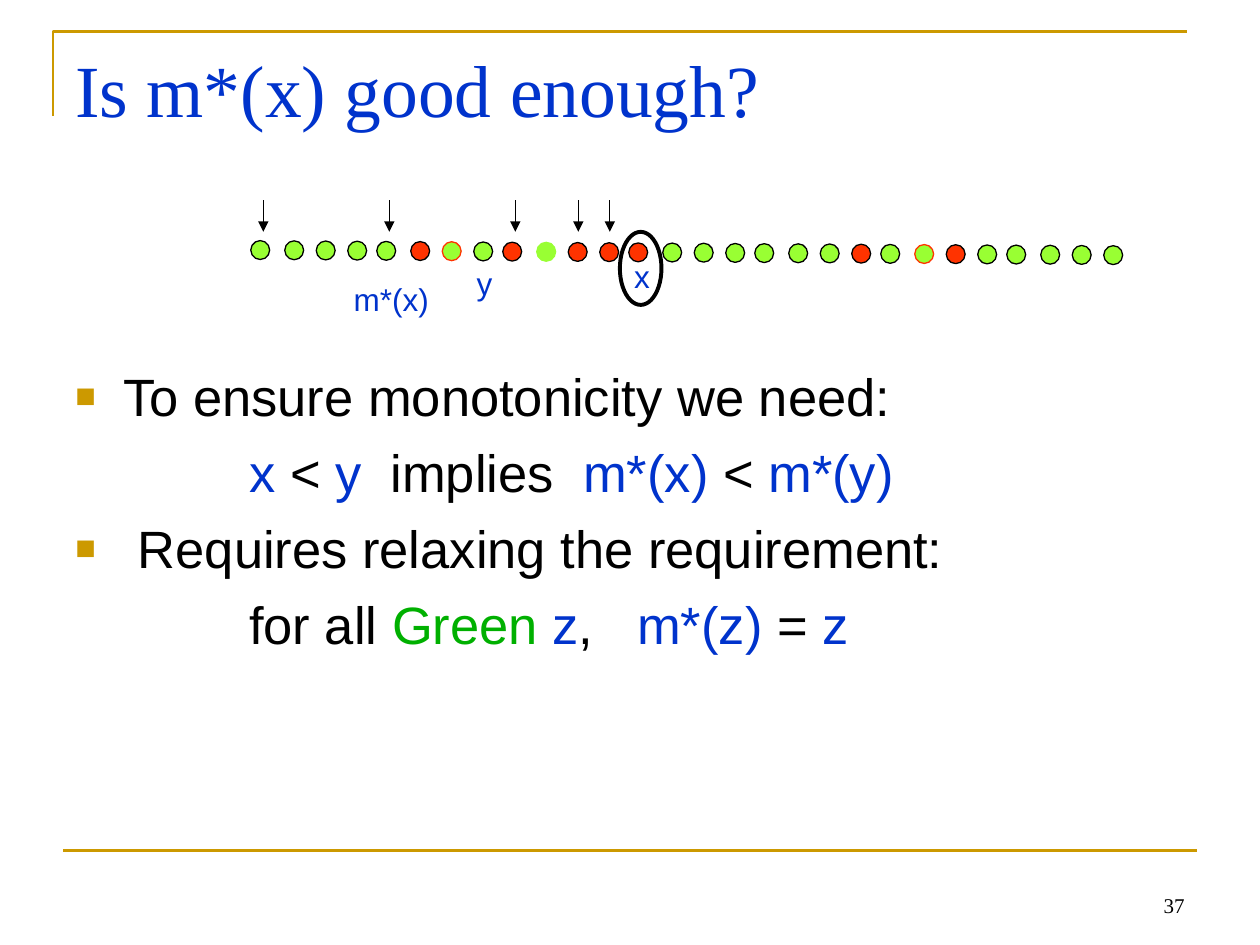
from dataclasses import dataclass

from lxml import etree
from pptx import Presentation
from pptx.dml.color import RGBColor
from pptx.enum.shapes import MSO_CONNECTOR, MSO_SHAPE
from pptx.enum.text import MSO_ANCHOR, PP_ALIGN
from pptx.oxml.ns import qn
from pptx.util import Inches, Pt

STRAIGHT = MSO_CONNECTOR.STRAIGHT
OVAL = MSO_SHAPE.OVAL
TOP, BOTTOM = MSO_ANCHOR.TOP, MSO_ANCHOR.BOTTOM
LEFT, CENTER, RIGHT = PP_ALIGN.LEFT, PP_ALIGN.CENTER, PP_ALIGN.RIGHT


@dataclass(frozen=True)
class Theme:
    gold: str = "CC9900"
    blue: str = "0033CC"
    black: str = "000000"
    word_green: str = "00B000"
    dot_green: str = "99FF33"
    dot_red: str = "FF3300"
    serif: str = "Times New Roman"
    sans: str = "Arial"
    title_size: int = 42
    body_size: int = 30
    label_size: int = 18
    number_size: int = 12
    rule: float = 1.5
    thin: float = 0.75
    thick: float = 2.25


THEME = Theme()

# Fill and outline of each kind of dot in the sequence
DOT_STYLES = {
    "G": (THEME.dot_green, THEME.black),
    "R": (THEME.dot_red, THEME.black),
    "g": (THEME.dot_green, THEME.dot_red),
    "b": (THEME.dot_green, THEME.dot_green),
}
SEQUENCE = "GGGGGRgGRbRRRGGGGGGRGgRGGGGG"
DOT_STEPS = (0, 0.27, 0.52, 0.77)  # offsets inside each group of four
ARROW_OFFSETS = (0, 1, 2, 2.5, 2.75)

# Each line: has a bullet, then its words with their colours
BODY_LINES = [
    (True, [("To ensure monotonicity we need:", THEME.black)]),
    (False, [("x", THEME.blue), (" < ", THEME.black), ("y", THEME.blue),
             ("  implies  ", THEME.black), ("m*(x)", THEME.blue),
             (" < ", THEME.black), ("m*(y)", THEME.blue)]),
    (True, [(" Requires relaxing the requirement:", THEME.black)]),
    (False, [("for all ", THEME.black), ("Green ", THEME.word_green),
             ("z", THEME.blue), (",   ", THEME.black), ("m*(z)", THEME.blue),
             (" =", THEME.black), (" z", THEME.blue)]),
]


def rgb(color):
    return RGBColor.from_string(color)


def set_line(item, color, width):
    item.line.color.rgb = rgb(color)
    item.line.width = Pt(width)


def set_font(paragraph, name, size, color):
    paragraph.font.name = name
    paragraph.font.size = Pt(size)
    paragraph.font.color.rgb = rgb(color)


def add_frame(slide, box, anchor=TOP, wrap=True):
    frame = slide.shapes.add_textbox(*map(Inches, box)).text_frame
    frame.word_wrap = wrap
    frame.vertical_anchor = anchor
    return frame


def add_text(slide, box, text, name, size, color, align=LEFT, anchor=TOP, wrap=True):
    paragraph = add_frame(slide, box, anchor, wrap).paragraphs[0]
    paragraph.text = text
    paragraph.alignment = align
    set_font(paragraph, name, size, color)


def add_rule(slide, start, end, color, width, arrow=False):
    rule = slide.shapes.add_connector(STRAIGHT, *map(Inches, start + end))
    set_line(rule, color, width)
    properties = rule.line._get_or_add_ln()
    if arrow:
        etree.SubElement(properties, qn("a:tailEnd"), type="triangle")
    etree.SubElement(properties.getparent(), qn("a:effectLst"))


def add_oval(slide, box, fill, outline, width):
    oval = slide.shapes.add_shape(OVAL, *map(Inches, box))
    oval.shadow.inherit = False
    if fill:
        oval.fill.solid()
        oval.fill.fore_color.rgb = rgb(fill)
    else:
        oval.fill.background()
    set_line(oval, outline, width)


def add_slide_frame(slide, box):
    """Corner line at the top left, rule at the bottom and page number."""
    left, top, width, height = box
    builder = slide.shapes.build_freeform(Inches(left), Inches(top + 0.67))
    builder.add_line_segments(
        [(Inches(left), Inches(top)), (Inches(left + width), Inches(top))], close=False)
    corner = builder.convert_to_shape()
    corner.shadow.inherit = False
    corner.fill.background()
    set_line(corner, THEME.gold, THEME.rule)

    rule_left, rule_top = left + 0.08, top + height
    rule_right = rule_left + width
    add_rule(slide, (rule_left, rule_top), (rule_right, rule_top), THEME.gold, THEME.rule)
    add_text(slide, (rule_right - 2.33, rule_top + 0.08, 2.33, 0.5), "37",
             THEME.serif, THEME.number_size, THEME.black, RIGHT, BOTTOM)


def add_dot_sequence(slide, box):
    """Row of dots sinking slightly to the right, with arrows, ring and labels."""
    left, top, _, height = box
    dot = 0.15
    dots_top, sink = top + 0.32, 0.04
    for i, kind in enumerate(SEQUENCE):
        group, step = divmod(i, len(DOT_STEPS))
        x = left + group + DOT_STEPS[step]
        y = dots_top + sink * i / (len(SEQUENCE) - 1)
        add_oval(slide, (x, y, dot, dot), *DOT_STYLES[kind], THEME.thin)

    for offset in ARROW_OFFSETS:
        x = left + 0.1 + offset
        add_rule(slide, (x, top), (x, top + 0.25), THEME.black, THEME.thin, arrow=True)

    add_oval(slide, (left + 2.93, top + 0.25, 0.33, height - 0.25),
             None, THEME.black, THEME.thick)
    labels = [("x", 2.94, 0.4, 0.33), ("m*(x)", 0.69, 0.58, 0.85), ("y", 1.69, 0.46, 0.33)]
    for text, x, y, width in labels:
        add_text(slide, (left + x, top + y, width, 0.4), text, THEME.sans,
                 THEME.label_size, THEME.blue, CENTER, wrap=len(text) > 1)


def add_bullet(properties):
    color = etree.SubElement(properties, qn("a:buClr"))
    etree.SubElement(color, qn("a:srgbClr"), val=THEME.gold)
    etree.SubElement(properties, qn("a:buSzPct"), val="65000")
    etree.SubElement(properties, qn("a:buFont"), typeface=THEME.sans)
    etree.SubElement(properties, qn("a:buChar"), char="■")


def add_body(slide, box):
    frame = add_frame(slide, box)
    for i, (bulleted, words) in enumerate(BODY_LINES):
        line = frame.paragraphs[0] if i == 0 else frame.add_paragraph()
        line.space_before = Pt(7.5)
        properties = line._p.get_or_add_pPr()
        hang = Inches(0.38)
        properties.set("marL", str(hang if bulleted else Inches(1.38)))
        properties.set("indent", str(-hang if bulleted else 0))
        if bulleted:
            add_bullet(properties)
        set_font(line, THEME.sans, THEME.body_size, THEME.black)
        for text, color in words:
            run = line.add_run()
            run.text = text
            run.font.color.rgb = rgb(color)


def main():
    deck = Presentation()
    deck.slide_width, deck.slide_height = Inches(10), Inches(7.5)
    slide = deck.slides.add_slide(deck.slide_layouts[6])
    add_slide_frame(slide, (0.42, 0.25, 9, 6.5))
    add_text(slide, (0.5, 0.3, 9, 1.25), "Is m*(x) good enough?",
             THEME.serif, THEME.title_size, THEME.blue)
    add_body(slide, (0.5, 2.84, 9, 3.87))
    add_dot_sequence(slide, (1.99, 1.59, 6.93, 0.83))
    deck.save("out.pptx")


if __name__ == "__main__":
    main()
